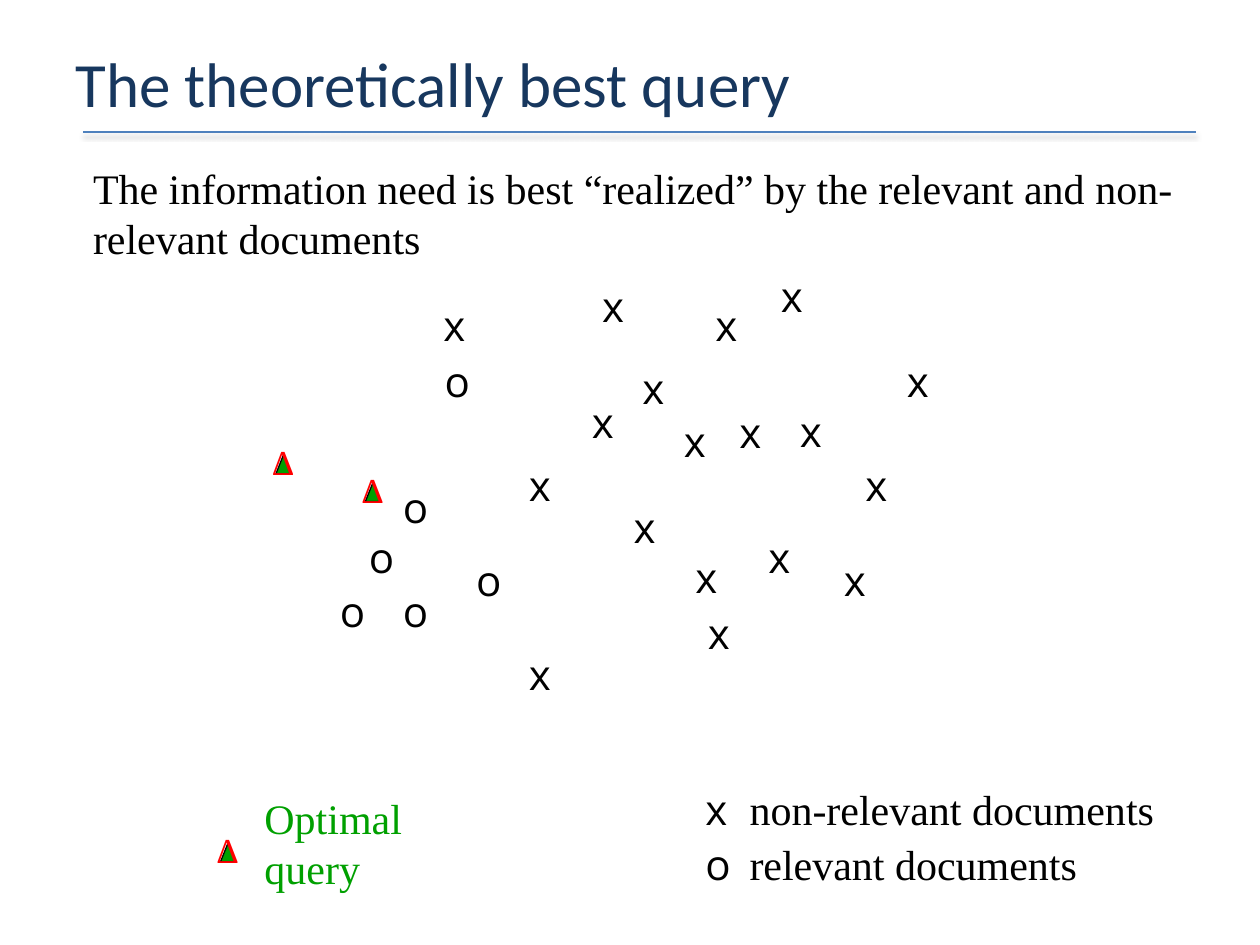
"""Builds the slide on the theoretically best query, with its document scatter."""
from dataclasses import dataclass

from lxml import etree
from pptx import Presentation
from pptx import util as u
from pptx.dml.color import RGBColor
from pptx.enum import shapes, text
from pptx.oxml import ns


@dataclass(frozen=True)
class Theme:
    title: str = "17375E"
    ink: str = "000000"
    rule: str = "4F81BD"
    optimal: str = "00A000"
    delta: str = "FF0000"
    head_font: str = "Calibri"
    body_font: str = "Times New Roman"
    mark_font: str = "Open Sans"
    title_size: int = 36
    body_size: int = 24
    delta_size: int = 20


class Deck:
    def __init__(self, theme, columns=10, rows=7.5):
        self.theme = theme
        self.prs = Presentation()
        self.prs.slide_width, self.prs.slide_height = u.Inches(10), u.Inches(7.5)
        self.col = self.prs.slide_width / columns
        self.row = self.prs.slide_height / rows
        self.s = self.prs.slides.add_slide(self.prs.slide_layouts[6])

    def grid(self, *lengths):
        return [round(n * (self.row if i % 2 else self.col)) for i, n in enumerate(lengths)]

    def add(self, parent, tag, **attrs):
        return etree.SubElement(parent, ns.qn(tag), {k: str(v) for k, v in attrs.items()})

    def style(self, r, font, size, color):
        r.font.name, r.font.size = font, u.Pt(size)
        r.font.color.rgb = RGBColor.from_string(color)

    def space_before(self, p, percent):
        pPr = p._p.get_or_add_pPr()
        self.add(self.add(pPr, "a:spcBef"), "a:spcPct", val=percent * 1000)
        return pPr

    def box(self, at, words="", font=None, size=None, color=None, home=None):
        t = self.theme
        sp = (home or self.s.shapes).add_textbox(*self.grid(*at))
        tf = sp.text_frame
        tf.word_wrap = True
        tf.auto_size = text.MSO_AUTO_SIZE.SHAPE_TO_FIT_TEXT
        if words:
            tf.text = words
            p = tf.paragraphs[0]
            self.space_before(p, 50)
            self.style(p.runs[0], font or t.body_font, size or t.body_size, color or t.ink)
        return tf

    def title(self, at, words):
        t = self.theme
        tf = self.box(at, words, t.head_font, t.title_size, t.title)
        tf.auto_size = text.MSO_AUTO_SIZE.NONE
        tf.vertical_anchor = text.MSO_ANCHOR.MIDDLE

    def rule(self, x1, x2, y):
        cn = self.s.shapes.add_connector(
            shapes.MSO_CONNECTOR.STRAIGHT, *self.grid(x1, y, x2, y))
        cn.line.color.rgb = RGBColor.from_string(self.theme.rule)
        cn.line.width = u.Pt(1)
        effects = self.add(cn._element.spPr, "a:effectLst")
        shadow = self.add(effects, "a:outerShdw", blurRad=u.Pt(3.1), dist=u.Pt(1.6),
                          dir=90 * 60000, rotWithShape=0)
        self.add(self.add(shadow, "a:srgbClr", val=self.theme.ink), "a:alpha", val=38000)

    def marks(self, letter, width, points):
        for x, y in points:
            self.box((x, y, width, 0.5), letter, self.theme.mark_font)

    def query(self, x, y):
        t = self.theme
        group = self.s.shapes.add_group_shape().shapes
        self.box((x, y, 0.5, 0.43), "Δ", size=t.delta_size, color=t.delta, home=group)
        sp = group.add_shape(shapes.MSO_SHAPE.ISOSCELES_TRIANGLE,
                             *self.grid(x + 0.13, y + 0.16, 0.12, 0.15))
        sp.shadow.inherit = False
        sp.fill.solid()
        sp.fill.fore_color.rgb = RGBColor.from_string(t.optimal)
        sp.line.color.rgb = RGBColor.from_string(t.ink)
        sp.line.width = u.Pt(0.75)

    def legend(self, at, entries):
        t = self.theme
        tf = self.box(at)
        for i, (mark, meaning, gap) in enumerate(entries):
            p = tf.add_paragraph() if i else tf.paragraphs[0]
            pPr = self.space_before(p, gap)
            self.add(self.add(pPr, "a:tabLst"), "a:tab", pos=round(0.35 * self.col), algn="l")
            for words, font in ((mark, t.mark_font), ("\t" + meaning, t.body_font)):
                r = p.add_run()
                r.text = words
                self.style(r, font, t.body_size, t.ink)


NON_RELEVANT = [
    (4.1, 3.6), (4.6, 3.1), (4.93, 3.93), (6, 4.17), (3.42, 2.33), (4.68, 2.18),
    (6.25, 3.17), (5.77, 3.18), (5, 2.83), (6.1, 2.1), (5.33, 3.25), (5.58, 2.33),
    (4.1, 5.1), (5.42, 4.33), (6.77, 3.6), (5.52, 4.77), (6.6, 4.35), (7.1, 2.77),
]
RELEVANT = [(2.6, 4.6), (3.68, 4.35), (3.1, 4.6), (2.83, 4.17), (3.43, 2.77), (3.1, 3.77)]
QUERIES = [(2.06, 3.45), (1.62, 6.53), (2.77, 3.67)]


def main():
    deck = Deck(Theme())
    deck.rule(0.66, 9.49, 1.05)
    deck.title((0.5, 0.3, 9, 0.71), "The theoretically best query")
    deck.box((0.64, 1.24, 8.86, 0.91), "The information need is best “realized” by "
             "the relevant and non-relevant documents")
    deck.marks("x", 0.33, NON_RELEVANT)
    deck.marks("o", 0.67, RELEVANT)
    for x, y in QUERIES:
        deck.query(x, y)
    deck.box((2, 6.24, 1.92, 0.9), "Optimal query", color=deck.theme.optimal)
    deck.legend((5.5, 6.17, 3.92, 0.94), [("x", "non-relevant documents", 50),
                                          ("o", "relevant documents", 10)])
    deck.prs.save("out.pptx")


if __name__ == "__main__":
    main()
